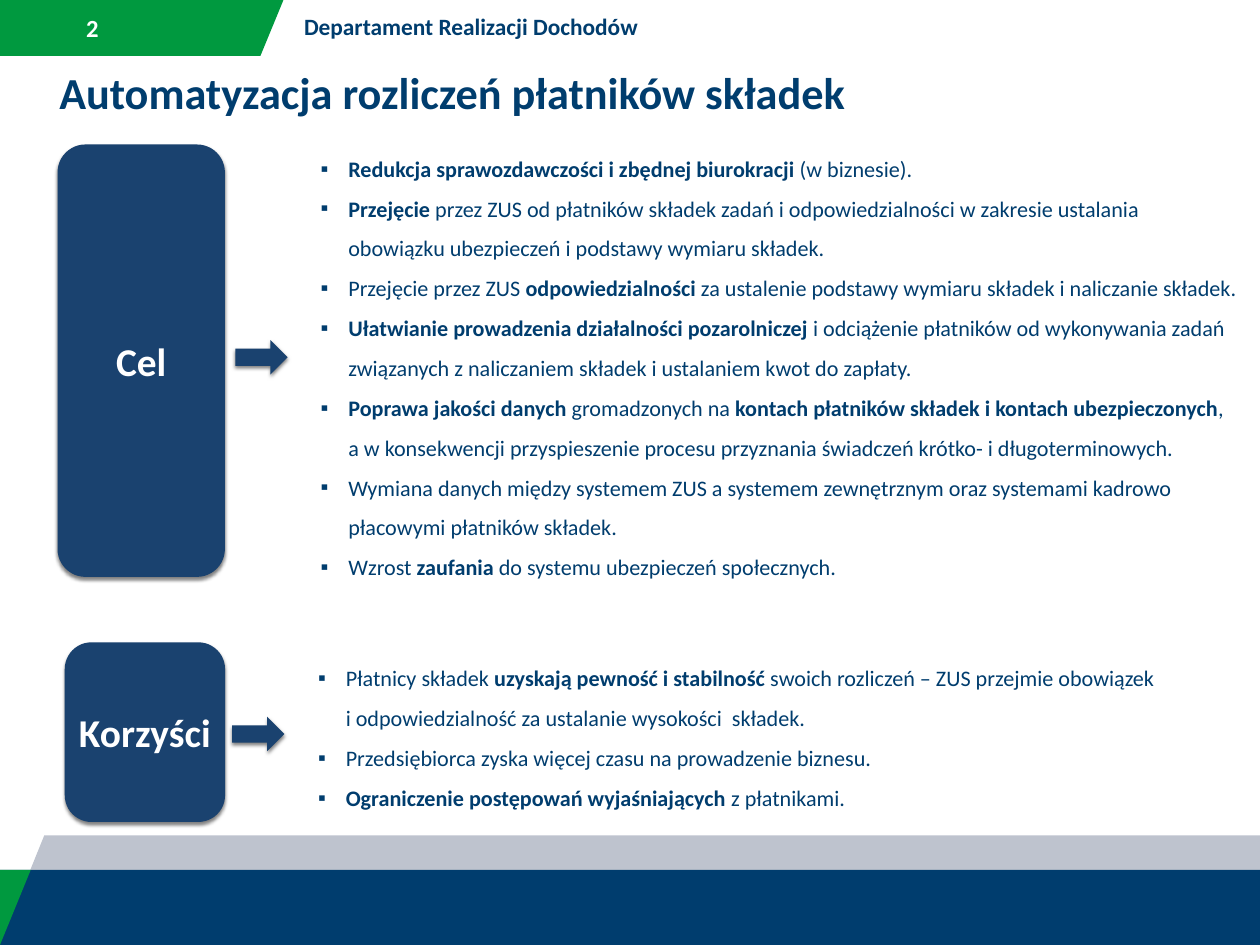
import pptx
import pptx.util
import pptx.dml.color
import pptx.enum.shapes
import pptx.enum.text
import pptx.oxml
import lxml.etree

Pt = pptx.util.Pt
SHAPE = pptx.enum.shapes.MSO_SHAPE
ALIGN = pptx.enum.text.PP_ALIGN
ANCHOR = pptx.enum.text.MSO_ANCHOR
NS = 'xmlns:a="http://schemas.openxmlformats.org/drawingml/2006/main"'
NAVY, BOX_BLUE, GREEN, GREY, WHITE = "003D6E", "1A426F", "00993F", "BEC3CE", "FFFFFF"
SLIDE_W, SLIDE_H = 1024, 768

# In the lists ** switches bold on and off, a newline is a line break
GOALS = [
    "**Redukcja sprawozdawczości i zbędnej biurokracji **(w biznesie).",
    "**Przejęcie** przez ZUS od płatników składek zadań i odpowiedzialności w zakresie "
    "ustalania obowiązku ubezpieczeń i podstawy wymiaru składek.",
    "Przejęcie przez ZUS **odpowiedzialności **za ustalenie podstawy wymiaru składek "
    "i naliczanie składek.",
    "**Ułatwianie prowadzenia działalności pozarolniczej **i odciążenie płatników od "
    "wykonywania zadań związanych z naliczaniem składek i ustalaniem kwot do zapłaty.",
    "**Poprawa jakości danych **gromadzonych na **kontach płatników składek i kontach "
    "ubezpieczonych**, \na w konsekwencji przyspieszenie procesu przyznania świadczeń "
    "krótko- i długoterminowych.",
    "Wymiana danych między systemem ZUS a systemem zewnętrznym oraz systemami kadrowo "
    "płacowymi płatników składek.",
    "Wzrost **zaufania **do systemu ubezpieczeń społecznych.",
]
BENEFITS = [
    "Płatnicy składek **uzyskają pewność i stabilność **swoich rozliczeń – ZUS przejmie "
    "obowiązek \ni odpowiedzialność za ustalanie wysokości  składek.",
    "Przedsiębiorca zyska więcej czasu na prowadzenie biznesu.",
    "**Ograniczenie postępowań wyjaśniających **z płatnikami.",
]


def rgb(color):
    return pptx.dml.color.RGBColor.from_string(color)


def place(sp, x, y, w, h):
    sp.left, sp.top, sp.width, sp.height = Pt(x), Pt(y), Pt(w), Pt(h)


def add_text(p, text, size=18, color=NAVY, bold=False, align=ALIGN.LEFT):
    p.alignment = align
    for i, part in enumerate(text.split("**")):
        for j, line in enumerate(part.split("\n")):
            if j:
                p.add_line_break()
            if line:
                r = p.add_run()
                r.text = line
                r.font.name, r.font.size = "Calibri", Pt(size)
                r.font.bold = bold or i % 2 == 1
                r.font.color.rgb = rgb(color)


def set_frame(tf, anchor=ANCHOR.TOP, inset=None):
    tf.word_wrap = True
    tf.auto_size = pptx.enum.text.MSO_AUTO_SIZE.NONE
    tf.vertical_anchor = anchor
    if inset is not None:
        tf.margin_left = tf.margin_right = tf.margin_top = tf.margin_bottom = Pt(inset)
    return tf


def paint(sp, color):
    sp.fill.solid()
    sp.fill.fore_color.rgb = rgb(color)
    sp.line.fill.background()
    sp.shadow.inherit = False
    return sp


def add_polygon(s, points, color):
    corners = [(Pt(x), Pt(y)) for x, y in points]
    builder = s.shapes.build_freeform(*corners[0], scale=1.0)
    builder.add_line_segments(corners[1:], close=True)
    return paint(builder.convert_to_shape(), color)


def add_block(s, kind, x, y, w, h):
    sp = paint(s.shapes.add_shape(kind, Pt(x), Pt(y), Pt(w), Pt(h)), BOX_BLUE)
    effects = sp._element.spPr.find(pptx.oxml.ns.qn("a:effectLst"))
    effects.append(lxml.etree.fromstring(
        f'<a:outerShdw {NS} blurRad="{Pt(3)}" dist="{Pt(2)}" dir="5400000" rotWithShape="0">'
        '<a:srgbClr val="000000"><a:alpha val="50000"/></a:srgbClr></a:outerShdw>'))
    return sp


def add_text_box(s, text, x, y, w, h, anchor=ANCHOR.TOP, inset=None, **fmt):
    sp = s.shapes.add_textbox(Pt(x), Pt(y), Pt(w), Pt(h))
    add_text(set_frame(sp.text_frame, anchor, inset).paragraphs[0], text, **fmt)


def fill_list(sp, items, x, y, w, h):
    place(sp, x, y, w, h)
    tf = set_frame(sp.text_frame)
    for i, item in enumerate(items):
        p = tf.add_paragraph() if i else tf.paragraphs[0]
        pPr = p._p.get_or_add_pPr()
        pPr.set("marL", str(Pt(22.5)))
        pPr.set("indent", str(-Pt(22.5)))
        for xml in (f'<a:buClr {NS}><a:srgbClr val="{NAVY}"/></a:buClr>',
                    f'<a:buChar {NS} char="▪"/>'):
            pPr.append(lxml.etree.fromstring(xml))
        p.line_spacing, p.space_before, p.space_after = 1.5, Pt(0), Pt(0)
        add_text(p, item)


def header(s, x, y, w, h):
    tab_w = 230.4
    add_polygon(s, [(x, y), (x + tab_w, y), (x + tab_w - 18.7, y + h), (x, y + h)], GREEN)
    add_text_box(s, "2", x + 65.5, y + 6.5, 61, 32.4, anchor=ANCHOR.MIDDLE,
                 inset=4.5, size=20, color=WHITE, bold=True)
    add_text_box(s, "Departament Realizacji Dochodów", x + 240, y + 6, w - 298, 30,
                 size=19, bold=True)


def footer(s, x, y, w, h):
    band_y, bottom = y + 28, y + h
    add_polygon(s, [(x, bottom), (x + 36, y), (x + w, y), (x + w, bottom)], GREY)
    band = s.shapes.add_shape(SHAPE.RECTANGLE, Pt(x), Pt(band_y), Pt(w), Pt(bottom - band_y))
    paint(band, NAVY)
    add_polygon(s, [(x, band_y), (x + 25, band_y), (x, bottom)], GREEN)


def title(s, x, y, w, h):
    sp = s.shapes.title
    place(sp, x, y, w, h)
    add_text(set_frame(sp.text_frame).paragraphs[0],
             "Automatyzacja rozliczeń płatników składek", size=36, bold=True)


def section(s, label, x, y, w, h, arrow_x, arrow_y):
    """Labelled box with an arrow, whose offsets count from the box corner."""
    sp = add_block(s, SHAPE.ROUNDED_RECTANGLE, x, y, w, h)
    tf = set_frame(sp.text_frame, ANCHOR.MIDDLE, 4.5)
    add_text(tf.paragraphs[0], label, size=32, color=WHITE, bold=True, align=ALIGN.CENTER)
    add_block(s, SHAPE.RIGHT_ARROW, x + arrow_x, y + arrow_y, 42.5, 28)


def main():
    prs = pptx.Presentation()
    prs.slide_width, prs.slide_height = Pt(SLIDE_W), Pt(SLIDE_H)
    s = prs.slides.add_slide(prs.slide_layouts[3])

    # Frame of the slide
    header(s, 0, 0, SLIDE_W, 45.4)
    footer(s, 0, 679, SLIDE_W, SLIDE_H - 679)
    title(s, 41, 49.7, 862, 50)

    # Goals
    section(s, "Cel", 46.8, 117.4, 136, 351.4, arrow_x=144.5, arrow_y=159)
    fill_list(s.placeholders[1], GOALS, 253.4, 111.6, 760, 363)

    # Benefits
    section(s, "Korzyści", 52.6, 522, 130.3, 146, arrow_x=136, arrow_y=60.5)
    fill_list(s.placeholders[2], BENEFITS, 251.3, 525.6, 723, 150)

    prs.save("out.pptx")


if __name__ == "__main__":
    main()
